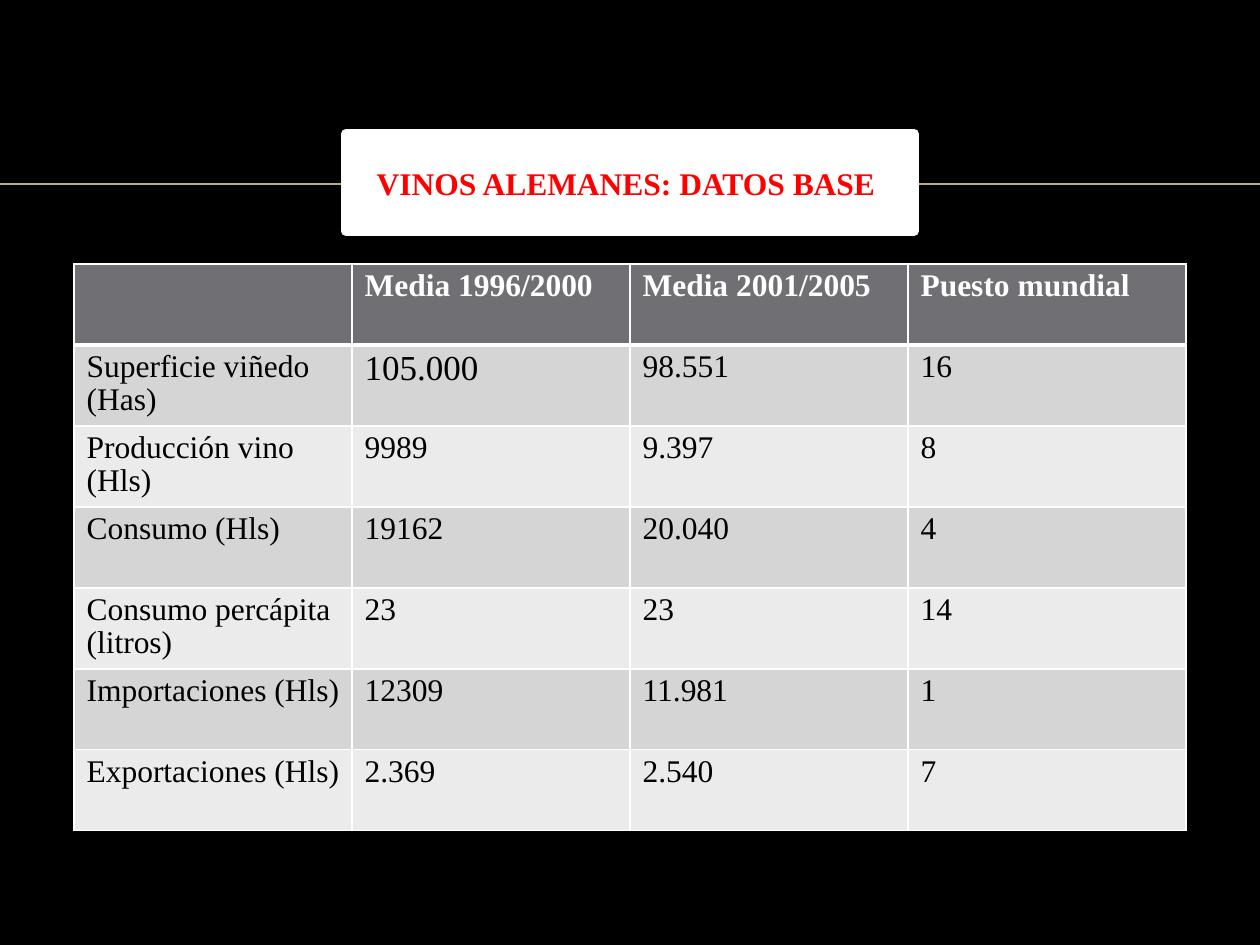
import dataclasses

import pptx
import pptx.dml.color
import pptx.enum.shapes
import pptx.enum.text
import pptx.oxml.ns
import pptx.util
from lxml import etree

FONT = "Times New Roman"
WHITE = "FFFFFF"
HEAD = "6F6F74"
BANDS = ("D5D5D6", "EBEBEB")


@dataclasses.dataclass
class Box:
    left: int
    top: int
    width: int
    height: int


@dataclasses.dataclass
class Style:
    color: str
    bold: bool = False
    size: int = 18


ROWS = [
    ("", "Media 1996/2000", "Media 2001/2005", "Puesto mundial"),
    ("Superficie viñedo (Has)", "105.000", "98.551", "16"),
    ("Producción vino (Hls)", "9989", "9.397", "8"),
    ("Consumo (Hls)", "19162", "20.040", "4"),
    ("Consumo percápita (litros)", "23", "23", "14"),
    ("Importaciones (Hls)", "12309", "11.981", "1"),
    ("Exportaciones (Hls)", "2.369", "2.540", "7"),
]


def px(count: int) -> int:
    return round(count * 914400 / 126)


def rgb(code: str) -> pptx.dml.color.RGBColor:
    return pptx.dml.color.RGBColor.from_string(code)


def paint(fill, code: str) -> None:
    fill.solid()
    fill.fore_color.rgb = rgb(code)


def write(frame, text: str, style: Style) -> None:
    frame.text = text
    for run in frame.paragraphs[0].runs:
        run.font.name = FONT
        run.font.size = pptx.util.Pt(style.size)
        run.font.bold = style.bold
        run.font.color.rgb = rgb(style.color)


def edge(cell, side: str, width: int) -> None:
    props = cell._tc.get_or_add_tcPr()
    line = etree.Element(pptx.oxml.ns.qn(f"a:{side}"), w=str(pptx.util.Pt(width)))
    fill = etree.SubElement(line, pptx.oxml.ns.qn("a:solidFill"))
    etree.SubElement(fill, pptx.oxml.ns.qn("a:srgbClr"), val=WHITE)
    props.append(line)


def draw_rule(slide, y: int, width: int) -> None:
    rule = slide.shapes.add_connector(
        pptx.enum.shapes.MSO_CONNECTOR.STRAIGHT, 0, px(y), px(width), px(y))
    rule.line.color.rgb = rgb("BBAA8A")
    rule.line.width = pptx.util.Pt(1)
    etree.SubElement(rule._element.spPr, pptx.oxml.ns.qn("a:effectLst"))


def draw_title(slide, box: Box, text: str) -> None:
    shape = slide.shapes.add_shape(
        pptx.enum.shapes.MSO_SHAPE.RECTANGLE,
        px(box.left), px(box.top), px(box.width), px(box.height))
    shape.shadow.inherit = False
    paint(shape.fill, WHITE)
    shape.line.color.rgb = rgb(WHITE)
    shape.line.width = pptx.util.Pt(6)
    frame = shape.text_frame
    frame.word_wrap = True
    frame.vertical_anchor = pptx.enum.text.MSO_ANCHOR.MIDDLE
    write(frame, text, Style("FF0000", True))
    frame.paragraphs[0].alignment = pptx.enum.text.PP_ALIGN.CENTER
    frame.paragraphs[0].space_before = pptx.util.Pt(4)


def draw_cell(cell, text: str, row: int, style: Style) -> None:
    write(cell.text_frame, text, style)
    cell.text_frame.paragraphs[0].line_spacing = 0.95
    for side in ("lnL", "lnR", "lnT", "lnB"):
        thick = (row, side) in ((0, "lnB"), (1, "lnT"))
        edge(cell, side, 3 if thick else 1)
    paint(cell.fill, BANDS[(row - 1) % 2] if row else HEAD)


def draw_table(slide, box: Box) -> None:
    table = slide.shapes.add_table(
        len(ROWS), len(ROWS[0]),
        px(box.left), px(box.top), px(box.width), px(box.height)).table
    for row, texts in enumerate(ROWS):
        for col, text in enumerate(texts):
            style = Style("000000") if row else Style(WHITE, True)
            if text == "105.000":
                style.size = 20
            draw_cell(table.cell(row, col), text, row, style)


def main() -> None:
    deck = pptx.Presentation()
    deck.slide_width, deck.slide_height = px(1260), px(945)
    slide = deck.slides.add_slide(deck.slide_layouts[6])
    paint(slide.background.fill, "000000")
    draw_rule(slide, 184, 1260)
    draw_title(slide, Box(346, 134, 568, 97), "VINOS ALEMANES: DATOS BASE ")
    draw_table(slide, Box(74, 264, 1112, 567))
    deck.save("out.pptx")


if __name__ == "__main__":
    main()
